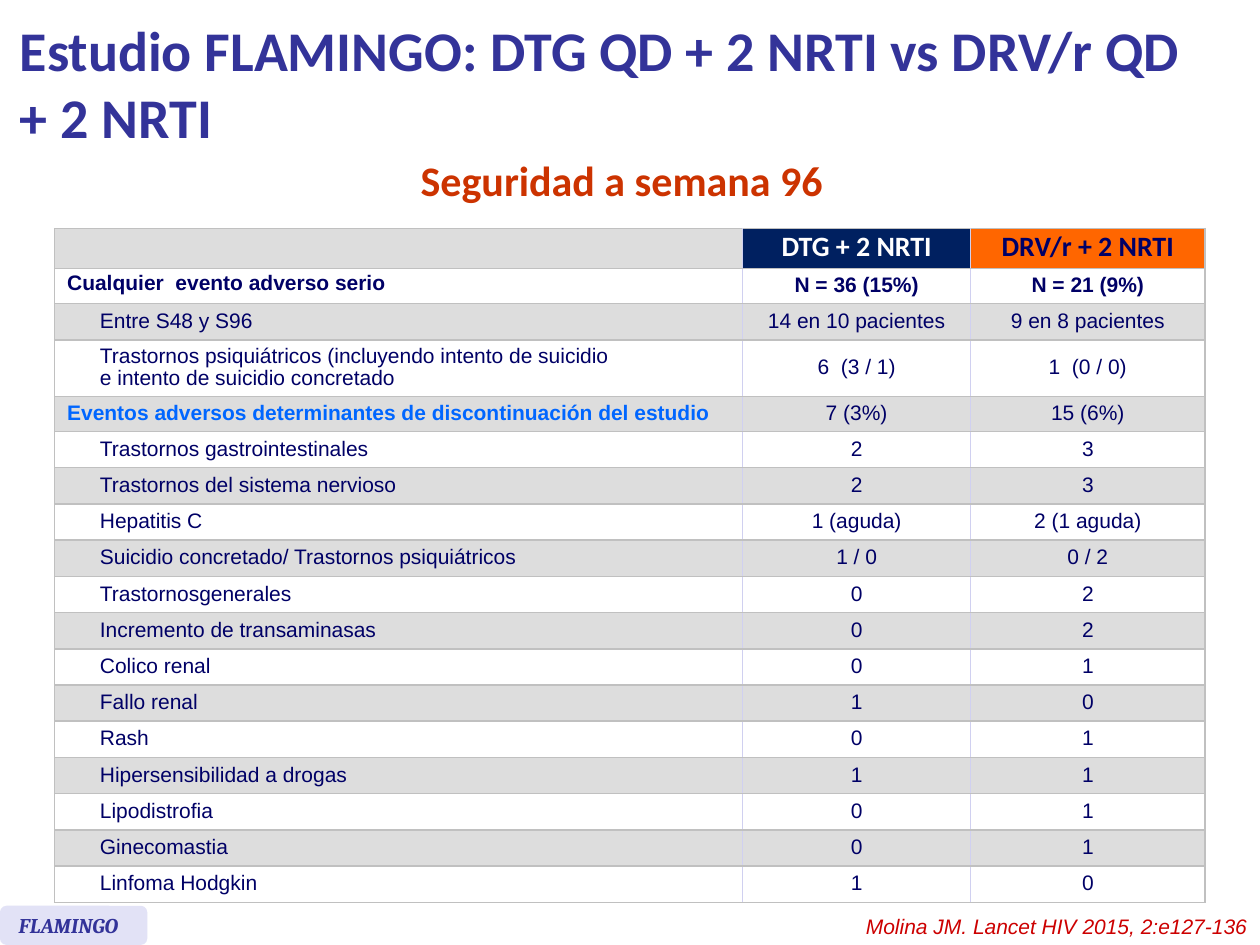
import pptx
import pptx.dml.color
import pptx.enum.shapes
import pptx.enum.text
import pptx.oxml.ns
import pptx.util
import lxml.etree

Cm = pptx.util.Cm
Pt = pptx.util.Pt
ALIGN = pptx.enum.text.PP_ALIGN
ANCHOR = pptx.enum.text.MSO_ANCHOR

COLORS = {
    "title": "333399", "subtitle": "CC3300", "body": "000066", "highlight": "0066FF",
    "citation": "CC0000", "badge": "E2E2F6", "white": "FFFFFF", "band": "DDDDDD",
    "dtg": "002060", "drv": "FF6600", "grid": "C0C0C0", "divider": "D0D0F0",
}

TITLE = "Estudio FLAMINGO: DTG QD + 2 NRTI vs DRV/r QD\n+ 2 NRTI"
SUBTITLE = "Seguridad a semana 96"
BADGE = "FLAMINGO"
CITATION = "Molina JM. Lancet HIV 2015, 2:e127-136"

EVENTS = [
    ("", "DTG + 2 NRTI", "DRV/r + 2 NRTI"),
    ("Cualquier  evento adverso serio", "N = 36 (15%)", "N = 21 (9%)"),
    ("Entre S48 y S96", "14 en 10 pacientes", "9 en 8 pacientes"),
    ("Trastornos psiquiátricos (incluyendo intento de suicidio\n"
     "e intento de suicidio concretado", "6  (3 / 1)", "1  (0 / 0)"),
    ("Eventos adversos determinantes de discontinuación del estudio", "7 (3%)", "15 (6%)"),
    ("Trastornos gastrointestinales", "2", "3"),
    ("Trastornos del sistema nervioso", "2", "3"),
    ("Hepatitis C", "1 (aguda)", "2 (1 aguda)"),
    ("Suicidio concretado/ Trastornos psiquiátricos", "1 / 0", "0 / 2"),
    ("Trastornosgenerales", "0", "2"),
    ("Incremento de transaminasas", "0", "2"),
    ("Colico renal", "0", "1"),
    ("Fallo renal", "1", "0"),
    ("Rash", "0", "1"),
    ("Hipersensibilidad a drogas", "1", "1"),
    ("Lipodistrofia", "0", "1"),
    ("Ginecomastia", "0", "1"),
    ("Linfoma Hodgkin", "1", "0"),
]
HEADER, SERIOUS, PSYCHIATRIC, DISCONTINUED = 0, 1, 3, 4
SECTIONS = (HEADER, SERIOUS, DISCONTINUED)
COLUMN_WIDTHS = [0.66, 13.21, 4.6, 4.72]
ROW_HEIGHT = 0.73
SPECIAL_HEIGHTS = {HEADER: 0.8, SERIOUS: 0.71, PSYCHIATRIC: 1.14, DISCONTINUED: 0.71}
EMPTY_SIZE = 8


def rgb(name):
    return pptx.dml.color.RGBColor.from_string(COLORS[name])


def write(frame, text, color="body", size=12, font="Arial", bold=False, italic=False,
          align=ALIGN.LEFT, spacing=None):
    paragraph = frame.paragraphs[0]
    paragraph.text = text
    paragraph.alignment = align
    if spacing:
        paragraph.line_spacing = spacing
    for run in paragraph.runs:
        run.font.name = font
        run.font.size = Pt(size)
        run.font.bold = bold
        run.font.italic = italic
        run.font.color.rgb = rgb(color)
    if not text:
        lxml.etree.SubElement(paragraph._p, pptx.oxml.ns.qn("a:endParaRPr"),
                              sz=str(EMPTY_SIZE * 100))


def add_label(slide, box, text, anchor=ANCHOR.TOP, **style):
    frame = slide.shapes.add_textbox(*(Cm(length) for length in box)).text_frame
    frame.word_wrap = True
    frame.vertical_anchor = anchor
    write(frame, text, **style)


def set_borders(cell, colors):
    properties = cell._tc.get_or_add_tcPr()
    for side, color in zip("LRTB", colors):
        line = lxml.etree.SubElement(properties, pptx.oxml.ns.qn("a:ln" + side), w=str(Pt(1)))
        if color:
            fill = lxml.etree.SubElement(line, pptx.oxml.ns.qn("a:solidFill"))
            lxml.etree.SubElement(fill, pptx.oxml.ns.qn("a:srgbClr"), val=COLORS[color])
        else:
            lxml.etree.SubElement(line, pptx.oxml.ns.qn("a:noFill"))


def cell_style(row, column):
    if row == HEADER and column >= 2:
        return {"size": 16, "font": "Calibri", "bold": True, "spacing": 0.8,
                "align": ALIGN.CENTER, "color": "white" if column == 2 else "body"}
    label = column < 2
    return {"bold": row == SERIOUS or (row == DISCONTINUED and label),
            "color": "highlight" if row == DISCONTINUED and label else "body",
            "align": ALIGN.LEFT if label else ALIGN.CENTER,
            "spacing": Pt(10 if row == SERIOUS and label else 12.5)}


def add_events_table(slide):
    heights = [SPECIAL_HEIGHTS.get(row, ROW_HEIGHT) for row in range(len(EVENTS))]
    table = slide.shapes.add_table(len(EVENTS), len(COLUMN_WIDTHS), Cm(1.1), Cm(4.61),
                                   Cm(sum(COLUMN_WIDTHS)), Cm(sum(heights))).table
    table.first_row = False
    table.horz_banding = False
    for column, width in zip(table.columns, COLUMN_WIDTHS):
        column.width = Cm(width)
    edges = ["grid", None, "divider", "divider", "grid"]
    for row, (event, dtg, drv) in enumerate(EVENTS):
        table.rows[row].height = Cm(heights[row])
        section = row in SECTIONS
        texts = [event, "", dtg, drv] if section else ["", event, dtg, drv]
        for column, text in enumerate(texts):
            cell = table.cell(row, column)
            set_borders(cell, [edges[column], edges[column + 1], "grid", "grid"])
            background = "white" if row % 2 else "band"
            if row == HEADER and column >= 2:
                background = "dtg" if column == 2 else "drv"
            cell.fill.solid()
            cell.fill.fore_color.rgb = rgb(background)
            cell.vertical_anchor = ANCHOR.MIDDLE
            write(cell.text_frame, text, **cell_style(row, column))
        if section:
            table.cell(row, 0).merge(table.cell(row, 1))


def add_badge(slide):
    badge = slide.shapes.add_shape(pptx.enum.shapes.MSO_SHAPE.ROUNDED_RECTANGLE,
                                   Cm(0), Cm(18.26), Cm(2.97), Cm(0.79))
    badge.shadow.inherit = False
    badge.fill.solid()
    badge.fill.fore_color.rgb = rgb("badge")
    badge.line.fill.background()
    frame = badge.text_frame
    frame.margin_left = Cm(0.34)
    frame.margin_right = Cm(0)
    frame.vertical_anchor = ANCHOR.MIDDLE
    write(frame, BADGE, color="title", font="Cambria", bold=True, italic=True)


def main():
    deck = pptx.Presentation()
    deck.slide_width = Cm(25.4)
    deck.slide_height = Cm(19.05)
    slide = deck.slides.add_slide(deck.slide_layouts[6])
    add_label(slide, (0, 3.2, 25.07, 1.3), SUBTITLE, color="subtitle", size=24,
              font="Calibri", bold=True, align=ALIGN.CENTER, spacing=Pt(22.8))
    add_badge(slide)
    add_label(slide, (0.15, 0.13, 24.26, 3.07), TITLE, anchor=ANCHOR.MIDDLE,
              color="title", size=32, font="Calibri", bold=True)
    add_events_table(slide)
    add_label(slide, (9.25, 18.29, 16.15, 0.76), CITATION, color="citation",
              italic=True, align=ALIGN.RIGHT)
    deck.save("out.pptx")


if __name__ == "__main__":
    main()
